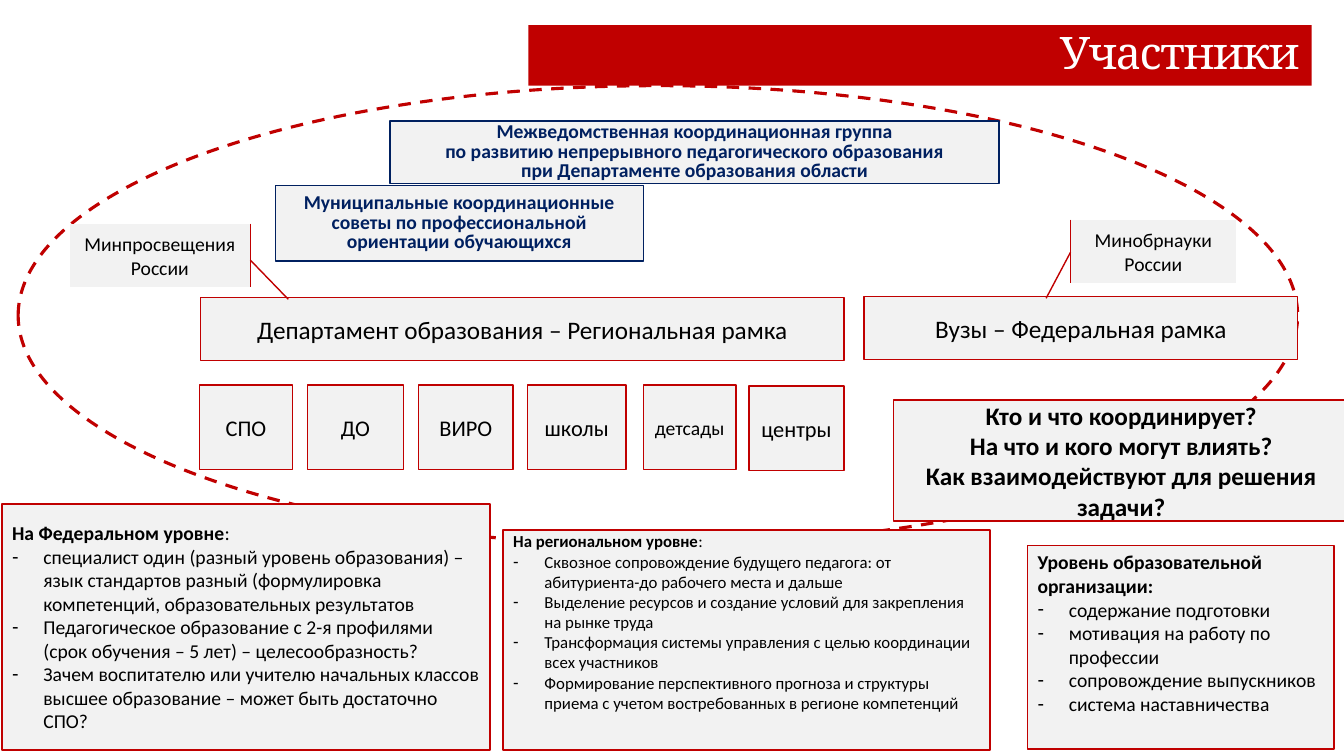
"""Builds the slide that maps the participants and their levels of coordination."""
from dataclasses import dataclass

from lxml import etree
from pptx import Presentation
from pptx.dml.color import RGBColor
from pptx.enum.dml import MSO_LINE
from pptx.enum.shapes import MSO_SHAPE
from pptx.enum.text import MSO_ANCHOR, MSO_AUTO_SIZE, PP_ALIGN
from pptx.oxml.ns import qn
from pptx.util import Inches, Pt

DASH = MSO_LINE.DASH
RECTANGLE, OVAL = MSO_SHAPE.RECTANGLE, MSO_SHAPE.OVAL
CALLOUT = MSO_SHAPE.LINE_CALLOUT_1_ACCENT_BAR
TOP, MIDDLE = MSO_ANCHOR.TOP, MSO_ANCHOR.MIDDLE
LEFT, CENTER, RIGHT = PP_ALIGN.LEFT, PP_ALIGN.CENTER, PP_ALIGN.RIGHT
NO_AUTOFIT = MSO_AUTO_SIZE.NONE
COMPARISON_LAYOUT = 4
COLORS = {"red": "C00000", "navy": "002060", "panel": "F2F2F2",
          "black": "000000", "white": "FFFFFF"}


@dataclass
class Box:
    """A bordered box with centred lines of text."""
    at: tuple
    lines: list
    size: int = 16
    color: str = "black"
    border: str = "red"
    bold: bool = False
    spacing: float | None = None
    pointer: tuple = ()


@dataclass
class Level:
    """A level of coordination with a heading and a list of points."""
    at: tuple
    heading: str
    colon_bold: bool
    size: int
    anchor: object
    top_inset: float
    points: list


BOXES = [
    Box((1.99, 2.95, 6.38, 0.63), ["Департамент образования – Региональная рамка"], 18),
    Box((8.57, 2.94, 4.3, 0.63), ["Вузы – Федеральная рамка"], 18),
    Box((1.98, 3.82, 0.92, 0.84), ["СПО"]),
    Box((3.05, 3.82, 0.95, 0.84), ["ДО"]),
    Box((4.15, 3.82, 0.94, 0.84), ["ВИРО"]),
    Box((5.23, 3.82, 0.98, 0.84), ["школы"]),
    Box((6.38, 3.82, 0.92, 0.84), ["детсады"], 14),
    Box((7.43, 3.83, 0.94, 0.84), ["центры"]),
    Box((3.87, 1.2, 6.04, 0.62),
        ["Межведомственная координационная группа",
         "по развитию непрерывного педагогического образования",
         "при Департаменте образования области"], 14, "navy", "navy", True, Pt(14)),
    Box((2.73, 1.84, 3.65, 0.75),
        ["Муниципальные координационные", "советы по профессиональной",
         "ориентации обучающихся"], 14, "navy", "navy", True, Pt(14)),
    Box((8.86, 3.97, 4.52, 1.2),
        ["Кто и что координирует?", "На что и кого могут влиять?",
         "Как взаимодействуют для решения задачи?"], 18, bold=True),
    Box((0.69, 2.22, 1.79, 0.63), ["Минпросвещения России"], 14,
        pointer=(0.575, 1.002, 1.19, 1.212)),
    Box((10.62, 2.18, 1.64, 0.63), ["Минобрнауки России"], 14,
        pointer=(0.516, -0.002, 1.237, -0.149)),
]

LEVELS = [
    Level((4.99, 5.26, 4.83, 2.18), "На региональном уровне", False, 12, TOP, 0.01,
          ["Сквозное сопровождение будущего педагога: от абитуриента-до рабочего места и дальше",
           "Выделение ресурсов и создание условий для закрепления на рынке труда",
           "Трансформация системы управления с целью координации всех участников",
           "Формирование перспективного прогноза и структуры приема с учетом "
           "востребованных в регионе компетенций"]),
    Level((0.02, 5, 4.84, 2.44), "На Федеральном уровне", False, 14, MIDDLE, 0.05,
          ["специалист один (разный уровень образования) – язык стандартов разный "
           "(формулировка компетенций, образовательных результатов",
           "Педагогическое образование с 2-я профилями (срок обучения – 5 лет) – целесообразность?",
           "Зачем воспитателю или учителю начальных классов высшее образование – "
           "может быть достаточно СПО?"]),
    Level((10.19, 5.41, 3.04, 2.02), "Уровень образовательной организации", True, 14, TOP, 0.05,
          ["содержание подготовки", "мотивация на работу по профессии",
           "сопровождение выпускников", "система наставничества"]),
]


def rgb(name: str) -> RGBColor:
    """Return the named colour."""
    return RGBColor.from_string(COLORS[name])


def write(para, text: str, *, size: int, color: str = "black", bold: bool = False,
          font: str = "Calibri", align=LEFT, spacing=None):
    """Add formatted text to a paragraph and return its span."""
    para.alignment = align
    para.space_before = para.space_after = Pt(0)
    if spacing is not None:
        para.line_spacing = spacing
    span = para.add_run()
    span.text = text
    span.font.size, span.font.bold, span.font.name = Pt(size), bold, font
    span.font.color.rgb = rgb(color)
    return span


def set_bullet(para, mark: str = "") -> None:
    """Give a paragraph a hanging mark, or none at all."""
    properties = para._p.get_or_add_pPr()
    indent = Inches(0.31) if mark else 0
    properties.set("marL", str(indent))
    properties.set("indent", str(-indent))
    if mark:
        etree.SubElement(properties, qn("a:buFontTx"))
        etree.SubElement(properties, qn("a:buChar")).set("char", mark)
    else:
        etree.SubElement(properties, qn("a:buNone"))


def place(shape, at: tuple) -> None:
    """Move and size a shape, in inches."""
    shape.left, shape.top, shape.width, shape.height = map(Inches, at)


def style_panel(shape, fill: str = "panel", border: str = "", anchor=MIDDLE):
    """Fill and outline a shape and return its prepared text frame."""
    shape.fill.solid()
    shape.fill.fore_color.rgb = rgb(fill)
    if border:
        shape.line.color.rgb = rgb(border)
        shape.line.width = Pt(1)
    frame = shape.text_frame
    frame.word_wrap, frame.auto_size = True, NO_AUTOFIT
    frame.vertical_anchor = anchor
    return frame


def draw_title(title) -> None:
    """Format the title as a red banner."""
    place(title, (5.24, 0.25, 7.77, 0.6))
    frame = style_panel(title, fill="red")
    frame.margin_left = frame.margin_top = frame.margin_bottom = 0
    frame.margin_right = Inches(0.12)
    span = write(frame.paragraphs[0], "Участники", size=32, color="white",
                 font="Cambria", align=RIGHT, spacing=0.9)
    span.font._element.set("spc", "-100")


def draw_level(holder, level: Level) -> None:
    """Fill a body placeholder with a heading and its points."""
    place(holder, level.at)
    frame = style_panel(holder, border="red", anchor=level.anchor)
    frame.margin_top = Inches(level.top_inset)
    heading = frame.paragraphs[0]
    write(heading, level.heading, size=level.size, bold=True)
    write(heading, ":", size=level.size, bold=level.colon_bold)
    set_bullet(heading)
    for point in level.points:
        para = frame.add_paragraph()
        write(para, point, size=level.size)
        set_bullet(para, "-")


def draw_box(page, box: Box) -> None:
    """Draw a box, or a callout when it has a pointer."""
    kind = CALLOUT if box.pointer else RECTANGLE
    shape = page.shapes.add_shape(kind, *map(Inches, box.at))
    shape.shadow.inherit = False
    for index, value in enumerate(box.pointer):
        shape.adjustments[index] = value
    frame = style_panel(shape, border=box.border)
    for index, line in enumerate(box.lines):
        para = frame.add_paragraph() if index else frame.paragraphs[0]
        write(para, line, size=box.size, color=box.color, bold=box.bold,
              align=CENTER, spacing=box.spacing)


def draw_orbit(page) -> None:
    """Draw the dashed ellipse behind everything else."""
    orbit = page.shapes.add_shape(OVAL, *map(Inches, (0.18, 0.85, 12.69, 4.56)))
    orbit.shadow.inherit = False
    orbit.fill.background()
    orbit.line.color.rgb = rgb("red")
    orbit.line.width, orbit.line.dash_style = Pt(2.25), DASH
    orbit._element.getparent().insert(2, orbit._element)


def main() -> None:
    """Build and save the deck."""
    deck = Presentation()
    deck.slide_width, deck.slide_height = Inches(13.33), Inches(7.5)
    page = deck.slides.add_slide(deck.slide_layouts[COMPARISON_LAYOUT])
    title, *holders = page.placeholders
    draw_orbit(page)
    draw_title(title)
    for holder, level in zip(holders, LEVELS):
        draw_level(holder, level)
    for spare in holders[len(LEVELS):]:
        spare._element.getparent().remove(spare._element)
    for box in BOXES:
        draw_box(page, box)
    deck.save("out.pptx")


if __name__ == "__main__":
    main()
